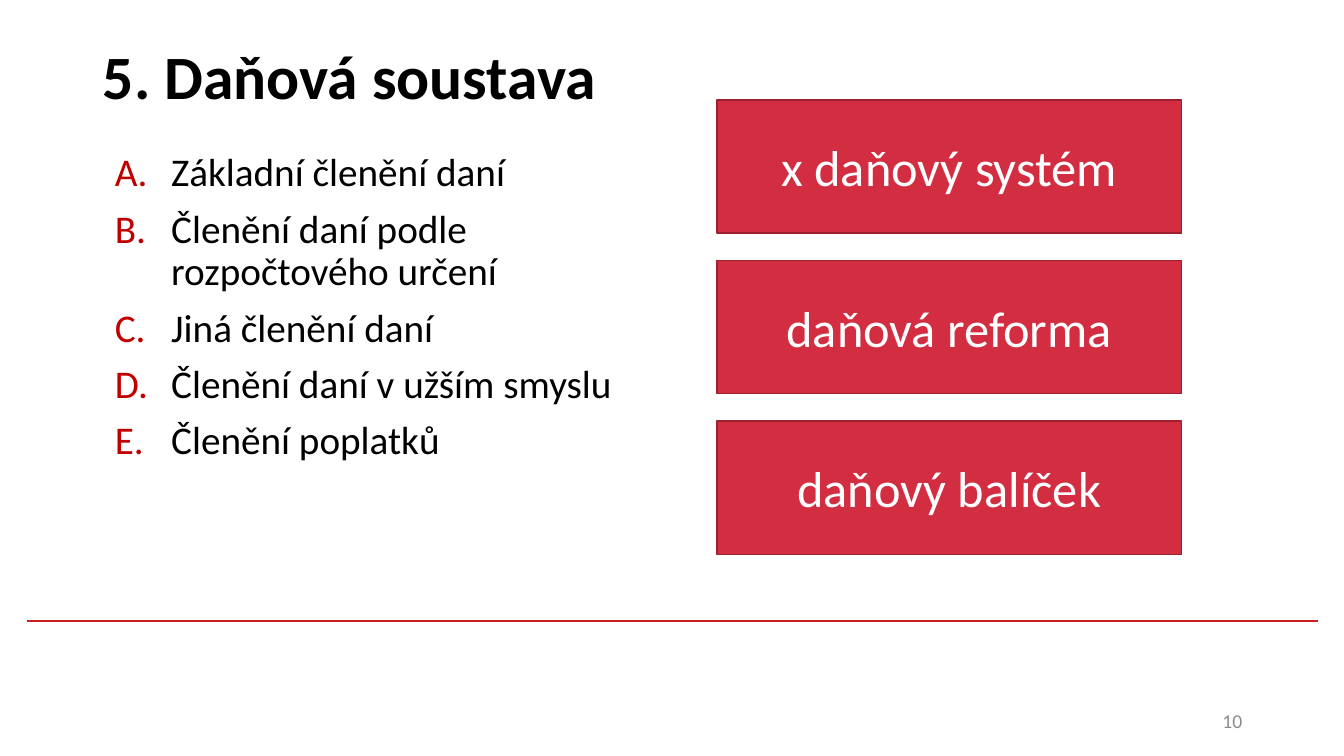
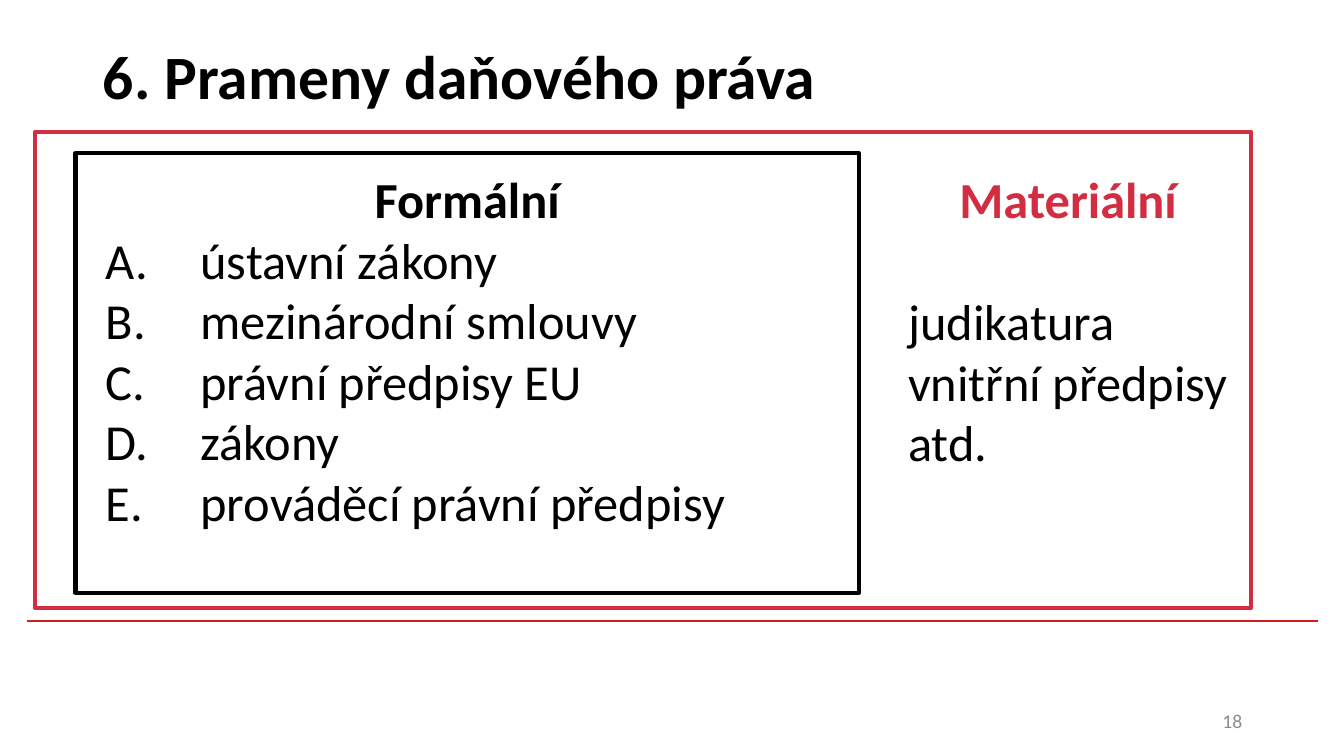
import pptx
import pptx.dml.color
import pptx.enum.shapes
import pptx.enum.text
import pptx.oxml.ns
import pptx.util
from lxml import etree

Inches = pptx.util.Inches
Pt = pptx.util.Pt
ALIGN = pptx.enum.text.PP_ALIGN
ANCHOR = pptx.enum.text.MSO_ANCHOR
qn = pptx.oxml.ns.qn

FONT = "Calibri"
BLACK, WHITE, GREY = "000000", "FFFFFF", "8C8C8C"
RED, DARK_RED, RULE_RED, LETTER_RED = "D22D40", "9B212F", "CD1F21", "C00000"


def rgb(value):
    """Turn a hex string into a colour."""
    return pptx.dml.color.RGBColor.from_string(value)


def inches(box):
    """Turn a box given in inches into lengths."""
    return [Inches(length) for length in box]


def style(paragraph, size, color=BLACK, bold=False, align=ALIGN.LEFT):
    """Set the font and alignment of a paragraph."""
    paragraph.alignment = align
    paragraph.font.name = FONT
    paragraph.font.size = Pt(size)
    paragraph.font.bold = bold
    paragraph.font.color.rgb = rgb(color)


def letter(paragraph, indent, hanging, color=None):
    """Number a paragraph with capital letters and a hanging indent."""
    properties = paragraph._p.get_or_add_pPr()
    properties.set("marL", str(Inches(indent)))
    properties.set("indent", str(-Inches(hanging)))
    if color:
        letter_color = etree.SubElement(properties, qn("a:buClr"))
        etree.SubElement(letter_color, qn("a:srgbClr")).set("val", color)
    etree.SubElement(properties, qn("a:buAutoNum")).set("type", "alphaUcPeriod")


def add_text(slide, box, lines, anchor=ANCHOR.TOP):
    """Place a wrapped text box and return its paragraphs."""
    frame = slide.shapes.add_textbox(*inches(box)).text_frame
    frame.word_wrap = True
    frame.vertical_anchor = anchor
    frame.text = "\n".join(lines)
    return frame.paragraphs


def add_panel(slide, box, fill, line, width):
    """Place a bordered rectangle."""
    panel = slide.shapes.add_shape(pptx.enum.shapes.MSO_SHAPE.RECTANGLE, *inches(box))
    panel.shadow.inherit = False
    panel.fill.solid()
    panel.fill.fore_color.rgb = rgb(fill)
    panel.line.color.rgb = rgb(line)
    panel.line.width = Pt(width)
    return panel


def add_slide(deck, heading, number):
    """Add a slide with its title, red rule and page number."""
    slide = deck.slides.add_slide(deck.slide_layouts[5])
    title = slide.shapes.title
    title.left, title.top, title.width, title.height = inches((0.92, 0.02, 11.5, 1.45))
    title.text_frame.text = heading
    title.text_frame.vertical_anchor = ANCHOR.MIDDLE
    style(title.text_frame.paragraphs[0], 44, bold=True)

    rule = slide.shapes.add_connector(
        pptx.enum.shapes.MSO_CONNECTOR.STRAIGHT, *inches((0.27, 6.16, 13.07, 6.16)))
    rule.line.color.rgb = rgb(RULE_RED)
    rule.line.width = Pt(1.5)
    etree.SubElement(rule._element.spPr, qn("a:effectLst"))

    page = add_text(slide, (9.42, 6.95, 3, 0.4), [number], ANCHOR.MIDDLE)[0]
    style(page, 14, GREY, align=ALIGN.RIGHT)
    return slide


def add_outline(slide, box, topics):
    """List the chapter's topics with red letters."""
    for index, topic in enumerate(add_text(slide, box, topics)):
        letter(topic, 0.68, 0.56, LETTER_RED)
        topic.line_spacing = 0.9
        topic.space_before = Pt(10 if index else 0)
        style(topic, 28)


def add_terms(slide, box, terms, gap):
    """Stack equally tall red panels, one for each term."""
    left, top, width, height = box
    panel_height = (height - gap * (len(terms) - 1)) / len(terms)
    for index, term in enumerate(terms):
        panel_top = top + index * (panel_height + gap)
        panel = add_panel(slide, (left, panel_top, width, panel_height), RED, DARK_RED, 1)
        panel.text_frame.text = term
        panel.text_frame.vertical_anchor = ANCHOR.MIDDLE
        style(panel.text_frame.paragraphs[0], 36, WHITE, align=ALIGN.CENTER)


def add_sources(slide, box, heading, sources, color=BLACK):
    """Place a centred heading over its sources and return the sources."""
    first, *rest = add_text(slide, box, [heading, *sources])
    style(first, 36, color, True, ALIGN.CENTER)
    return rest


def add_formal(slide, box):
    """Draw the black frame with the lettered formal sources."""
    left, top, width, height = box
    add_panel(slide, box, WHITE, BLACK, 3)
    sources = add_sources(
        slide, (left + 0.2, top + 0.1, width - 0.4, height - 0.6), "Formální",
        ["ústavní zákony", "mezinárodní smlouvy", "právní předpisy EU", "zákony",
         "prováděcí právní předpisy"])
    for source in sources:
        letter(source, 0.94, 0.94)
        style(source, 36)


def add_material(slide, box):
    """Place the material sources one line below their heading."""
    sources = add_sources(
        slide, box, "Materiální", ["judikatura", "vnitřní předpisy", "atd."], RED)
    sources[0].space_before = Pt(44)
    for source in sources:
        style(source, 36)


def add_law_sources(slide, box):
    """Draw the red frame around the formal and material sources."""
    left, top, width, height = box
    add_panel(slide, box, WHITE, RED, 3)
    add_formal(slide, (left + 0.4, top + 0.21, 7.77, height - 0.36))
    add_material(slide, (left + 8.56, top + 0.31, 3.37, height - 1))


def main():
    """Build and save the deck."""
    deck = pptx.Presentation()
    deck.slide_width, deck.slide_height = Inches(13.33), Inches(7.5)

    tax_system = add_slide(deck, "5. Daňová soustava", "10")
    add_outline(tax_system, (0.92, 1.47, 5.75, 4.57), [
        "Základní členění daní", "Členění daní podle rozpočtového určení",
        "Jiná členění daní", "Členění daní v užším smyslu", "Členění poplatků"])
    add_terms(tax_system, (7.11, 0.99, 4.61, 4.51),
              ["x daňový systém", "daňová reforma", "daňový balíček"], 0.27)

    tax_law = add_slide(deck, "6. Prameny daňového práva", "18")
    add_law_sources(tax_law, (0.35, 1.31, 12.06, 4.72))

    deck.save("out.pptx")


if __name__ == "__main__":
    main()
